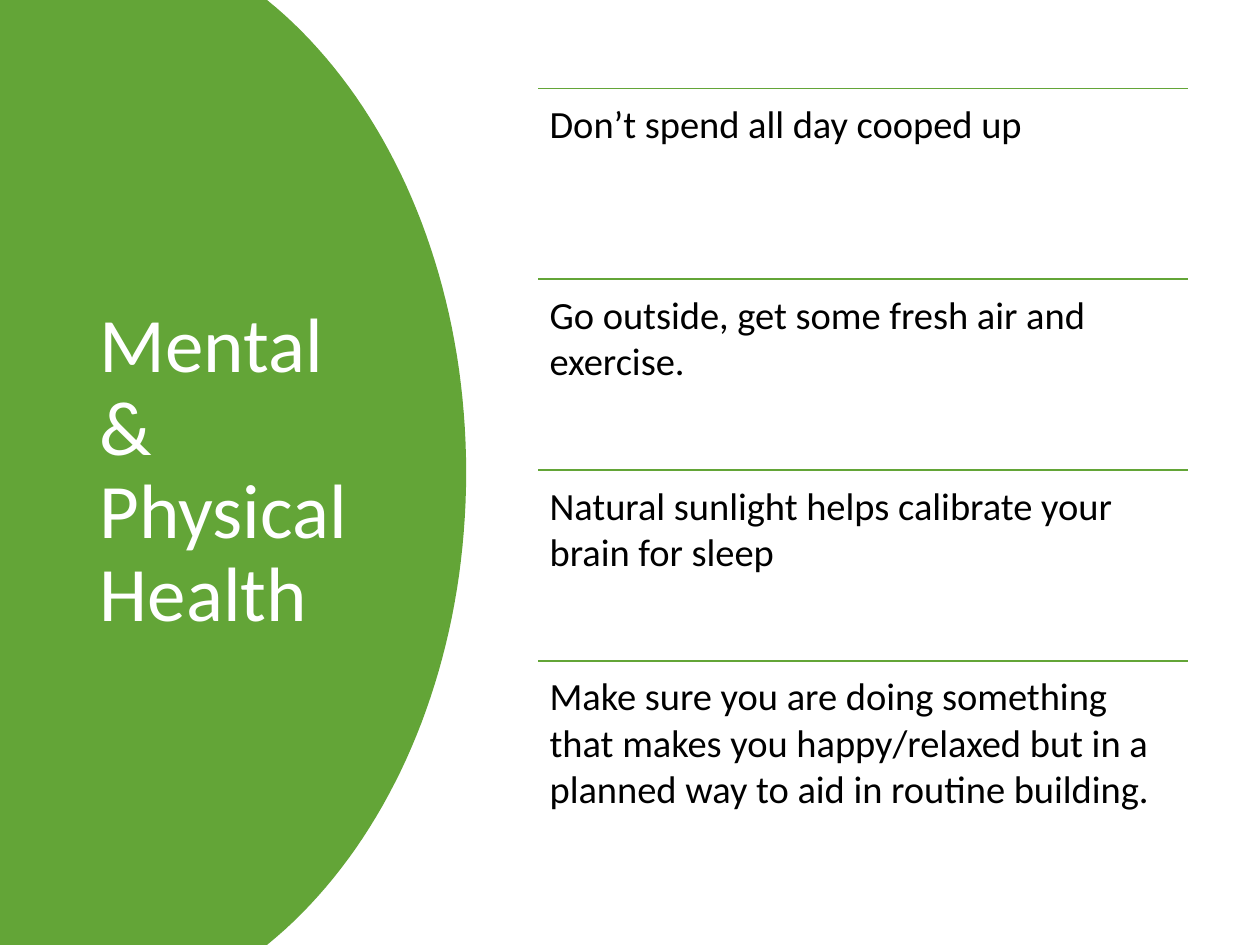
from dataclasses import dataclass

from lxml.etree import SubElement
from pptx import Presentation
from pptx.dml.color import RGBColor
from pptx.enum.shapes import MSO_CONNECTOR as Connector
from pptx.enum.text import MSO_ANCHOR as Anchor
from pptx.oxml.ns import qn
from pptx.util import Pt


@dataclass(frozen=True)
class Theme:
    """Colours, font and type sizes of the slide."""
    green: RGBColor = RGBColor(0x63, 0xA5, 0x37)
    white: RGBColor = RGBColor(0xFF, 0xFF, 0xFF)
    black: RGBColor = RGBColor(0, 0, 0)
    font: str = "Calibri"
    title_size: float = 44
    tip_size: float = 22
    rule_width: float = 1


THEME = Theme()
SLIDE_WIDTH, SLIDE_HEIGHT = 720, 540
TIP_LEFT, TIP_WIDTH = 307.5, 371.5
TIP_TOP, TIP_PITCH = 50.6, 109
TITLE = "Mental & Physical Health"
TIPS = [
    "Don’t spend all day cooped up",
    "Go outside, get some fresh air and exercise.",
    "Natural sunlight helps calibrate your brain for sleep",
    "Make sure you are doing something that makes you happy/relaxed "
    "but in a planned way to aid in routine building.",
]


def bezier(controls, step):
    """Return the point of a cubic curve at a fraction of its course."""
    rest = 1 - step
    weights = (rest ** 3, 3 * rest ** 2 * step, 3 * rest * step ** 2, step ** 3)
    return tuple(sum(w * c for w, c in zip(weights, axis)) for axis in zip(*controls))


def add_panel(slide, steps=40):
    """Draw the green side panel with its bulging right edge."""
    controls = [(152.6, 0), (221, 55.4), (266.4, 155.5), (266.4, SLIDE_HEIGHT / 2)]
    upper = [bezier(controls, i / steps) for i in range(steps + 1)]
    lower = [(x, SLIDE_HEIGHT - y) for x, y in reversed(upper[:-1])]
    outline = [(Pt(x), Pt(y)) for x, y in upper + lower + [(0, SLIDE_HEIGHT)]]
    builder = slide.shapes.build_freeform(0, 0)
    builder.add_line_segments(outline, close=True)
    panel = builder.convert_to_shape()
    panel.shadow.inherit = False
    panel.fill.solid()
    panel.fill.fore_color.rgb = THEME.green
    panel.line.fill.background()


def add_text(slide, wording, box, size, color, inset, anchor=Anchor.TOP):
    """Add a wrapping text box and return its paragraph."""
    label = slide.shapes.add_textbox(*map(Pt, box))
    frame = label.text_frame
    frame.word_wrap = True
    frame.vertical_anchor = anchor
    frame.margin_left = frame.margin_right = Pt(inset[0])
    frame.margin_top = frame.margin_bottom = Pt(inset[1])
    frame.text = wording
    paragraph = frame.paragraphs[0]
    font = paragraph.runs[0].font
    font.name, font.size, font.color.rgb = THEME.font, Pt(size), color
    return paragraph


def add_rule(slide, top):
    """Draw the thin green line above a tip."""
    rule = slide.shapes.add_connector(
        Connector.STRAIGHT, Pt(TIP_LEFT), Pt(top), Pt(TIP_LEFT + TIP_WIDTH), Pt(top))
    rule.line.color.rgb = THEME.green
    rule.line.width = Pt(THEME.rule_width)
    SubElement(rule._element.spPr, qn("a:effectLst"))


def add_tip(slide, top, wording):
    """Add one tip beneath its rule."""
    add_rule(slide, top)
    box = (TIP_LEFT, top, TIP_WIDTH, TIP_PITCH)
    tip = add_text(slide, wording, box, THEME.tip_size, THEME.black, (6.6, 6.6))
    tip.space_after = Pt(0.35 * THEME.tip_size)
    tip.line_spacing = 1.0


def main():
    """Build the slide and save it."""
    deck = Presentation()
    deck.slide_width, deck.slide_height = Pt(SLIDE_WIDTH), Pt(SLIDE_HEIGHT)
    slide = deck.slides.add_slide(deck.slide_layouts[6])
    add_panel(slide)
    title = add_text(slide, TITLE, (50, 50.6, 174, 438.5), THEME.title_size,
                     THEME.white, (7.2, 3.6), Anchor.MIDDLE)
    title.line_spacing = 0.9
    for row, wording in enumerate(TIPS):
        add_tip(slide, TIP_TOP + row * TIP_PITCH, wording)
    deck.save("out.pptx")


if __name__ == "__main__":
    main()
